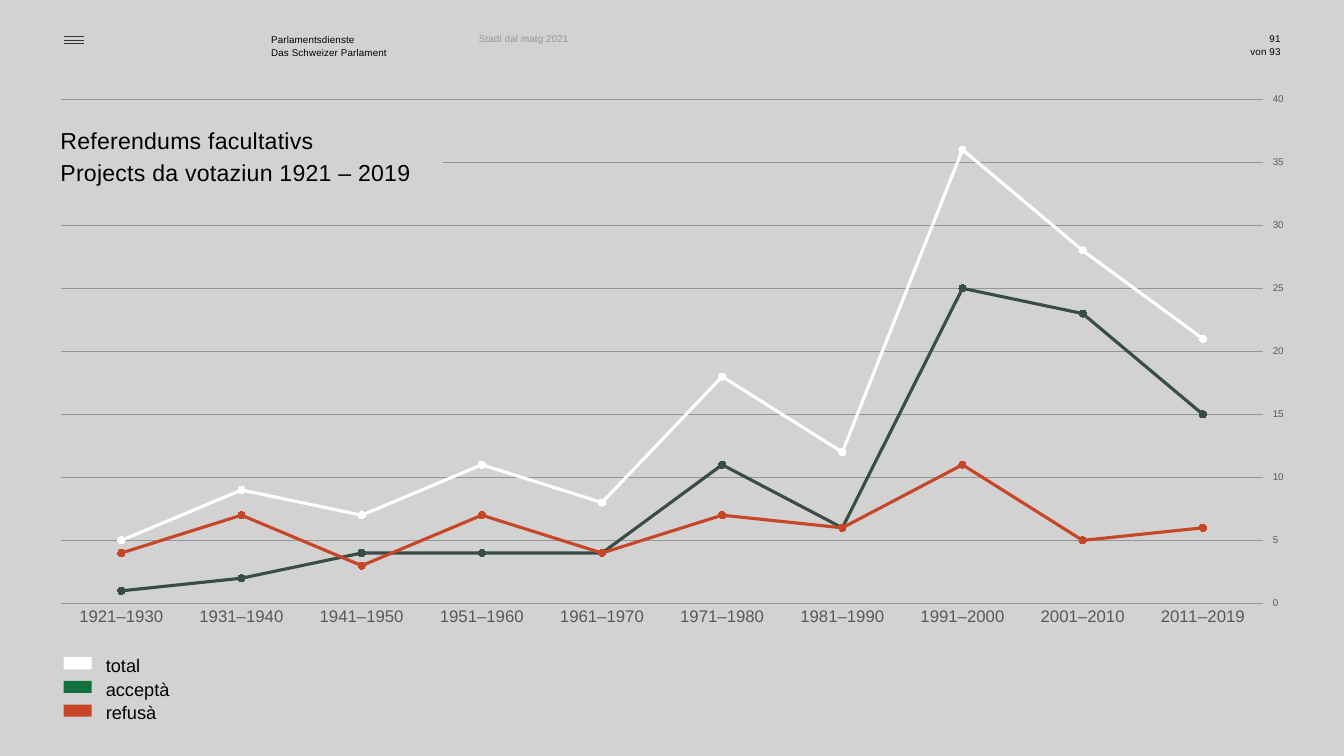
from dataclasses import dataclass

from lxml.etree import SubElement
from pptx import Presentation
from pptx.chart.data import CategoryChartData
from pptx.dml.color import RGBColor
from pptx.enum.chart import (XL_CHART_TYPE, XL_MARKER_STYLE,
                             XL_TICK_LABEL_POSITION, XL_TICK_MARK)
from pptx.enum.shapes import MSO_CONNECTOR, MSO_SHAPE
from pptx.enum.text import PP_ALIGN
from pptx.oxml import parse_xml
from pptx.oxml.ns import nsdecls, qn
from pptx.util import Inches, Pt


@dataclass(frozen=True)
class Theme:
    font: str = "Arial"
    back: str = "D2D2D2"
    ink: str = "000000"
    gray: str = "969696"
    label: str = "595959"
    icon: str = "343434"
    white: str = "FFFFFF"
    pine: str = "384D44"
    green: str = "12703C"
    red: str = "C84628"
    small: float = 7
    axis: float = 12
    legend: float = 13
    title: float = 16.5


THEME = Theme()
YEARS = ["1921–1930", "1931–1940", "1941–1950", "1951–1960", "1961–1970",
         "1971–1980", "1981–1990", "1991–2000", "2001–2010", "2011–2019"]
SERIES = [
    ("acceptà", [1, 2, 4, 4, 4, 11, 6, 25, 23, 15], THEME.pine),
    ("refusà", [4, 7, 3, 7, 4, 7, 6, 11, 5, 6], THEME.red),
    ("total", [5, 9, 7, 11, 8, 18, 12, 36, 28, 21], THEME.white),
]
LEGEND = [("total", THEME.white), ("acceptà", THEME.green),
          ("refusà", THEME.red)]


def rgb(code):
    return RGBColor.from_string(code)


def style(font, size, color):
    font.name = THEME.font
    font.size = Pt(size)
    font.color.rgb = rgb(color)


def add_text(slide, area, text, size=THEME.small, color=THEME.ink,
             align=PP_ALIGN.LEFT, lead=None, track=0.1):
    box = slide.shapes.add_textbox(*map(Inches, area))
    frame = box.text_frame
    frame.margin_left = frame.margin_right = 0
    frame.margin_top = frame.margin_bottom = 0
    frame.word_wrap = True
    frame.text = text
    for para in frame.paragraphs:
        para.alignment = align
        para.line_spacing = lead
        for run in para.runs:
            style(run.font, size, color)
            run._r.get_or_add_rPr().set("spc", str(round(track * 100)))


def add_block(slide, area, color):
    block = slide.shapes.add_shape(MSO_SHAPE.RECTANGLE, *map(Inches, area))
    block.shadow.inherit = False
    block.fill.solid()
    block.fill.fore_color.rgb = rgb(color)
    block.line.fill.background()


def add_rule(slide, left, top, width):
    rule = slide.shapes.add_connector(
        MSO_CONNECTOR.STRAIGHT, Inches(left), Inches(top),
        Inches(left + width), Inches(top))
    rule.line.color.rgb = rgb(THEME.icon)
    rule.line.width = Pt(0.4)
    SubElement(rule._element.spPr, qn("a:effectLst"))


def set_plot(chart, x, y, width, height):
    plot = chart._chartSpace.find(".//" + qn("c:plotArea"))
    for old in plot.findall(qn("c:layout")):
        plot.remove(old)
    plot.insert(0, parse_xml(
        f'<c:layout {nsdecls("c")}><c:manualLayout>'
        '<c:layoutTarget val="inner"/>'
        '<c:xMode val="edge"/><c:yMode val="edge"/>'
        f'<c:x val="{x}"/><c:y val="{y}"/>'
        f'<c:w val="{width}"/><c:h val="{height}"/>'
        '</c:manualLayout></c:layout>'))


def style_axis(axis, size):
    axis.major_tick_mark = XL_TICK_MARK.NONE
    axis.minor_tick_mark = XL_TICK_MARK.NONE
    style(axis.tick_labels.font, size, THEME.label)


def style_line(line, color, width):
    line.color.rgb = rgb(color)
    line.width = Pt(width)


def add_lines(slide, area):
    data = CategoryChartData()
    data.categories = YEARS
    for name, values, _ in SERIES:
        data.add_series(name, values)
    chart = slide.shapes.add_chart(
        XL_CHART_TYPE.LINE_MARKERS, *map(Inches, area), data).chart
    chart.has_title = False
    chart.has_legend = False
    style(chart.font, 10, THEME.ink)
    set_plot(chart, 0.008, 0.028, 0.969, 0.903)

    years = chart.category_axis
    style_axis(years, THEME.axis)
    style_line(years.format.line, THEME.gray, 0.75)

    scale = chart.value_axis
    style_axis(scale, THEME.small)
    scale.minimum_scale, scale.maximum_scale = 0, 40
    scale.major_unit = 5
    scale.tick_label_position = XL_TICK_LABEL_POSITION.HIGH
    scale.format.line.fill.background()
    scale.has_major_gridlines = True
    style_line(scale.major_gridlines.format.line, THEME.gray, 0.75)

    plot = chart.plots[0]
    plot.vary_by_categories = False
    for series, (_, _, color) in zip(plot.series, SERIES):
        series.smooth = False
        style_line(series.format.line, color, 2.25)
        mark = series.marker
        mark.style = XL_MARKER_STYLE.CIRCLE
        mark.size = 5
        mark.format.fill.solid()
        mark.format.fill.fore_color.rgb = rgb(color)
        mark.format.line.fill.background()


def add_legend(slide):
    for row, (_, color) in enumerate(LEGEND):
        add_block(slide, (0.63, 6.52 + row * 0.235, 0.28, 0.12), color)
    add_text(slide, (1.05, 6.47, 1.2, 0.72),
             "\n".join(name for name, _ in LEGEND),
             THEME.legend, lead=Pt(17), track=0)


def add_header(slide):
    for row in range(3):
        add_rule(slide, 0.63, 0.36 + row * 0.035, 0.2)
    add_text(slide, (2.69, 0.32, 1.3, 0.26),
             "Parlamentsdienste\nDas Schweizer Parlament", lead=1.1)
    add_text(slide, (4.75, 0.32, 1.21, 0.12), "Stadi dal matg 2021",
             color=THEME.gray)
    for top, text in ((0.32, "91"), (0.45, "von 93")):
        add_text(slide, (12.26, top, 0.44, 0.12), text,
                 align=PP_ALIGN.RIGHT)


def main():
    deck = Presentation()
    deck.slide_width, deck.slide_height = Inches(13.33), Inches(7.5)
    slide = deck.slides.add_slide(deck.slide_layouts[6])
    slide.background.fill.solid()
    slide.background.fill.fore_color.rgb = rgb(THEME.back)
    add_header(slide)
    add_lines(slide, (0.51, 0.83, 12.3, 5.54))
    add_legend(slide)
    add_block(slide, (0.39, 1.12, 4, 0.82), THEME.back)
    add_text(slide, (0.6, 1.22, 5.59, 0.96),
             "Referendums facultativs\nProjects da votaziun 1921 – 2019",
             THEME.title, lead=1.14, track=0.2)
    deck.save("out.pptx")


if __name__ == "__main__":
    main()
